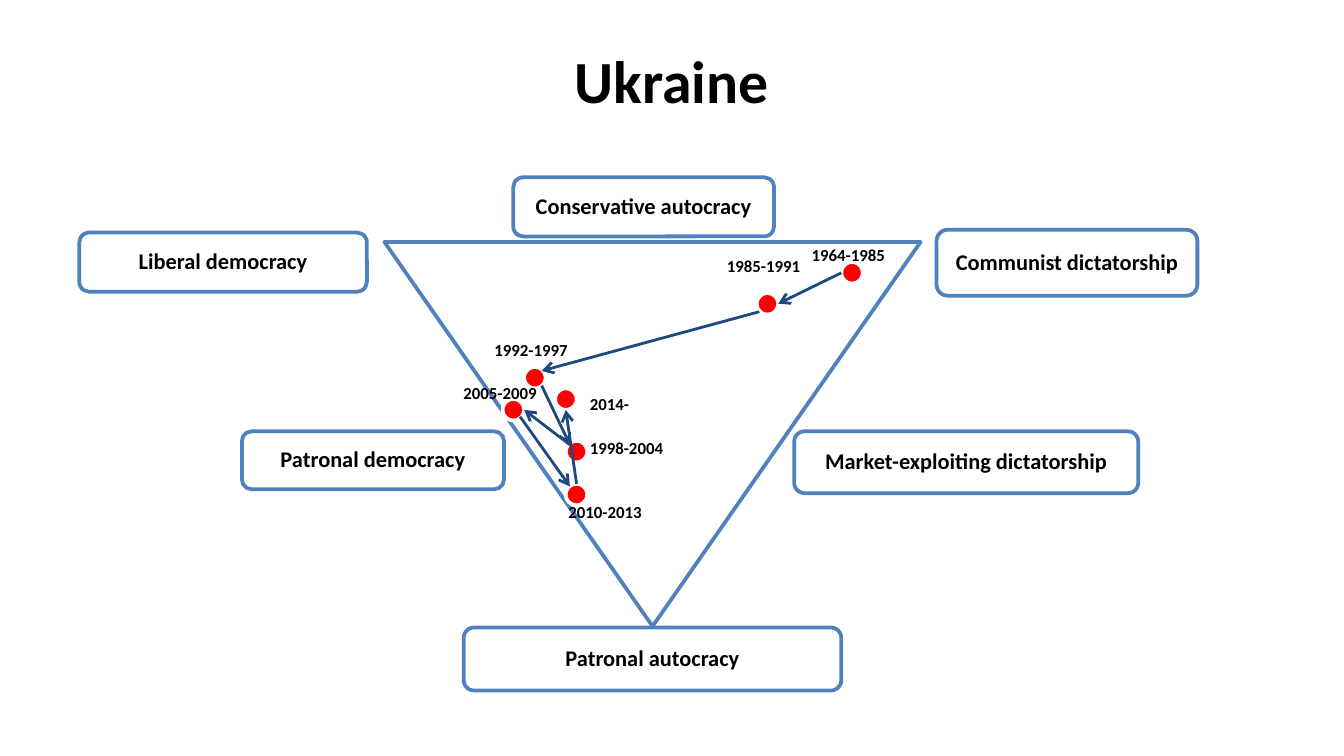
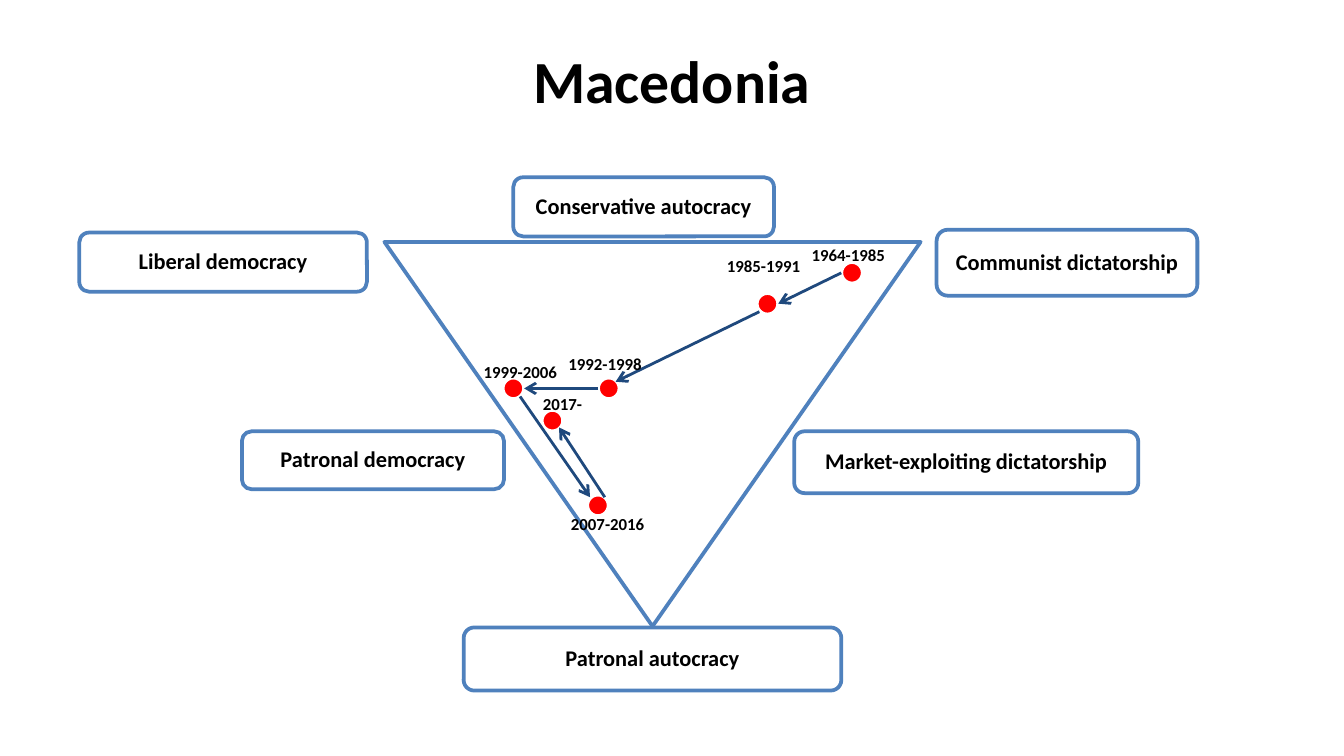
from pptx import Presentation
from pptx.dml.color import RGBColor
from pptx.enum.shapes import MSO_CONNECTOR, MSO_SHAPE
from pptx.enum.text import MSO_ANCHOR, MSO_AUTO_SIZE, PP_ALIGN
from pptx.oxml.ns import qn
from pptx.util import Pt
from lxml.etree import SubElement

BLUE = RGBColor(0x4F, 0x81, 0xBD)
NAVY = RGBColor(0x1F, 0x49, 0x7D)
RED = RGBColor(0xFF, 0x00, 0x00)
WHITE = RGBColor(0xFF, 0xFF, 0xFF)
BLACK = RGBColor(0x00, 0x00, 0x00)
DOT = 11.5

REGIMES = [
    ("Communist dictatorship", 501.8, 123.1, 139.7, 35.3),
    ("Liberal democracy", 42.5, 124.6, 154.1, 31.7),
    ("Patronal autocracy", 248.4, 336.2, 202.3, 33.8),
    ("Conservative autocracy", 275, 95, 139.7, 31.7),
    ("Market-exploiting dictatorship", 425.5, 231.1, 184.3, 33.1),
    ("Patronal democracy", 129.6, 231.1, 140.4, 31),
]

SOVIET = [
    ("1964-1985", (450.7, 140.4), (427.7, 127.4)),
    ("1985-1991", (405.4, 157), (382.3, 133.2)),
]
START = [(450.7, 146.2, 416.9, 162.7)]

COUNTRIES = [
    ("Ukraine", [
        ("1992-1997", (280.8, 196.6), (257.8, 178.6)),
        ("1998-2004", (303.1, 236.2), (308.9, 231.1)),
        ("2005-2009", (269.3, 213.8), (241.2, 201.6)),
        ("2010-2013", (303.1, 259.2), (297.4, 265)),
        ("2014-", (297.4, 208.1), (308.9, 207.4)),
    ], [
        (406.8, 167, 290.2, 198.7),
        (290.2, 206.6, 305.3, 238.3),
        (305.3, 238.3, 280.8, 219.6),
        (278.6, 223.2, 305.3, 260.6),
        (308.9, 259.2, 303.1, 219.6),
    ]),
    ("Macedonia", [
        ("1992-1998", (320.4, 202.3), (297.4, 185.8)),
        ("1999-2006", (269.3, 202.3), (252, 190.1)),
        ("2007-2016", (314.6, 265), (298.8, 271.4)),
        ("2017-", (290.2, 219.6), (283.7, 207.4)),
    ], [
        (406.8, 167, 329.8, 204.5),
        (320.4, 208.1, 280.8, 208.1),
        (278.6, 212.4, 316.1, 266.4),
        (324, 266.4, 299.5, 229),
    ]),
]


def write(shape, text, size, align=PP_ALIGN.CENTER):
    frame = shape.text_frame
    frame.word_wrap = True
    frame.vertical_anchor = MSO_ANCHOR.MIDDLE
    para = frame.paragraphs[0]
    para.text = text
    para.alignment = align
    font = para.font
    font.name, font.size, font.bold = "Calibri", Pt(size), True
    font.color.rgb = BLACK
    return frame


def draw(slide, kind, box, line, fill=None):
    shape = slide.shapes.add_shape(kind, *map(Pt, box))
    shape.shadow.inherit = False
    shape.line.color.rgb = line
    shape.line.width = Pt(2)
    if fill is None:
        shape.fill.background()
    else:
        shape.fill.solid()
        shape.fill.fore_color.rgb = fill
    return shape


deck = Presentation()
deck.slide_width, deck.slide_height = Pt(720), Pt(405)

for country, stages, arrows in COUNTRIES:
    slide = deck.slides.add_slide(deck.slide_layouts[6])
    title = slide.shapes.add_textbox(0, Pt(15.1), Pt(720), Pt(55.4))
    write(title, country, 32)

    field = draw(slide, MSO_SHAPE.ISOSCELES_TRIANGLE,
                 (205.9, 129.6, 287.3, 205.9), BLUE)
    field.rotation = 180

    for name, *box in REGIMES:
        shape = draw(slide, MSO_SHAPE.ROUNDED_RECTANGLE, box, BLUE, WHITE)
        color = shape.fill._xPr.find(qn("a:solidFill"))[0]
        SubElement(color, qn("a:alpha"), val="90000")
        frame = write(shape, name, 12)
        frame.margin_left = frame.margin_right = Pt(5)
        frame.margin_top = frame.margin_bottom = Pt(5)
        frame.paragraphs[0].line_spacing = 0.9

    for period, dot, label in SOVIET + stages:
        draw(slide, MSO_SHAPE.OVAL, (*dot, DOT, DOT), WHITE, RED)

    for ends in START + arrows:
        arrow = slide.shapes.add_connector(
            MSO_CONNECTOR.STRAIGHT, *map(Pt, ends))
        arrow.line.color.rgb = NAVY
        arrow.line.width = Pt(1.5)
        SubElement(arrow.line._get_or_add_ln(), qn("a:tailEnd"), type="arrow")
        SubElement(arrow._element.spPr, qn("a:effectLst"))

    for period, dot, label in SOVIET + stages:
        note = slide.shapes.add_textbox(*map(Pt, (*label, 73.4, 18)))
        frame = write(note, period, 9, PP_ALIGN.LEFT)
        frame.vertical_anchor = MSO_ANCHOR.TOP
        frame.auto_size = MSO_AUTO_SIZE.SHAPE_TO_FIT_TEXT

deck.save("out.pptx")
